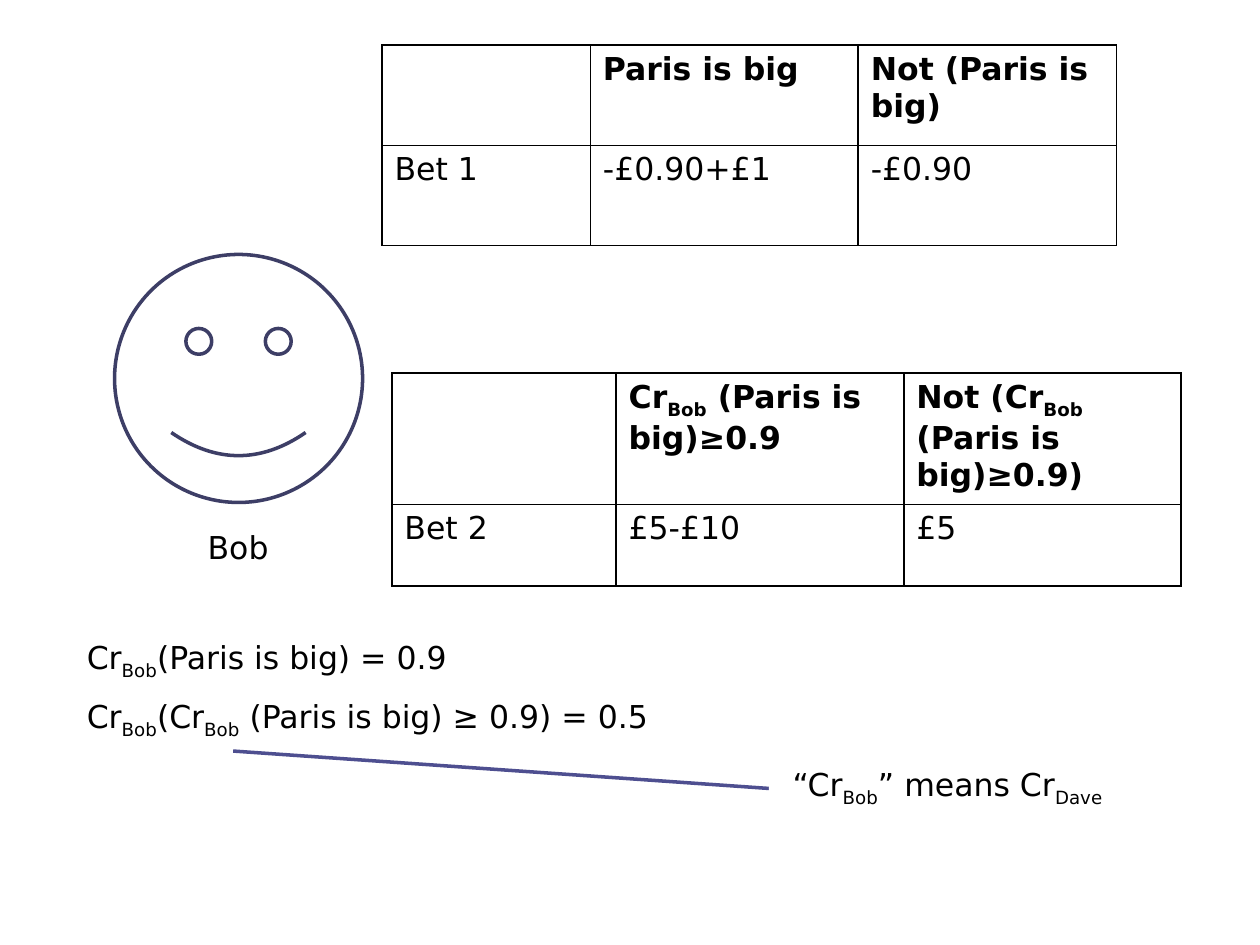
from dataclasses import dataclass

from lxml import etree
from pptx import Presentation
from pptx.dml.color import RGBColor
from pptx.enum.shapes import MSO_CONNECTOR, MSO_SHAPE
from pptx.enum.text import MSO_ANCHOR, PP_ALIGN
from pptx.oxml.ns import qn
from pptx.util import Cm, Pt

STRAIGHT = MSO_CONNECTOR.STRAIGHT
SMILEY = MSO_SHAPE.SMILEY_FACE
RECTANGLE = MSO_SHAPE.RECTANGLE
MIDDLE = MSO_ANCHOR.MIDDLE
LEFT = PP_ALIGN.LEFT
CENTER = PP_ALIGN.CENTER


@dataclass(frozen=True)
class Theme:
    font: str = "DejaVu Sans"
    size: int = 18
    ink: str = "000000"
    paper: str = "FFFFFF"
    face: str = "3D3E66"
    pointer: str = "4E4F90"
    stroke: float = 2
    border: float = 1
    subscript: str = "-25000"


class SlideBuilder:
    def __init__(self, slide, theme):
        self.shapes = slide.shapes
        self.theme = theme

    def set_wording(self, frame, wording, align=LEFT, bold=False):
        frame.word_wrap = True
        paragraph = frame.paragraphs[0]
        paragraph.alignment = align
        paragraph.font.name = self.theme.font
        paragraph.font.size = Pt(self.theme.size)
        paragraph.font.bold = bold
        paragraph.font.color.rgb = RGBColor.from_string(self.theme.ink)
        for position, part in enumerate(wording.split("|")):
            if not part:
                continue
            run = paragraph.add_run()
            run.text = part
            if position % 2:
                run._r.get_or_add_rPr().set("baseline", self.theme.subscript)

    def text(self, left, top, width, wording, align=LEFT):
        box = self.shapes.add_textbox(Cm(left), Cm(top), Cm(width), Cm(1.02))
        self.set_wording(box.text_frame, wording, align)

    def smiley(self, left, top, size):
        face = self.shapes.add_shape(SMILEY, Cm(left), Cm(top), Cm(size), Cm(size))
        face.shadow.inherit = False
        face.fill.background()
        face.line.color.rgb = RGBColor.from_string(self.theme.face)
        face.line.width = Pt(self.theme.stroke)

    def pointer(self, start_x, start_y, end_x, end_y):
        line = self.shapes.add_connector(
            STRAIGHT, Cm(start_x), Cm(start_y), Cm(end_x), Cm(end_y))
        line.line.color.rgb = RGBColor.from_string(self.theme.pointer)
        line.line.width = Pt(self.theme.stroke)
        etree.SubElement(line._element.spPr, qn("a:effectLst"))

    def note(self, left, top, width, height, wording):
        panel = self.shapes.add_shape(
            RECTANGLE, Cm(left), Cm(top), Cm(width), Cm(height))
        panel.shadow.inherit = False
        panel.fill.solid()
        panel.fill.fore_color.rgb = RGBColor.from_string(self.theme.paper)
        panel.line.fill.background()
        panel.text_frame.vertical_anchor = MIDDLE
        self.set_wording(panel.text_frame, wording, CENTER)

    def outline(self, cell):
        properties = cell._tc.get_or_add_tcPr()
        for order, side in enumerate(("lnL", "lnR", "lnT", "lnB")):
            edge = etree.Element(qn(f"a:{side}"), w=str(Pt(self.theme.border)))
            fill = etree.SubElement(edge, qn("a:solidFill"))
            etree.SubElement(fill, qn("a:srgbClr"), val=self.theme.ink)
            properties.insert(order, edge)

    def bet_table(self, left, top, widths, heights, rows):
        table = self.shapes.add_table(
            len(rows), len(widths), Cm(left), Cm(top),
            Cm(sum(widths)), Cm(sum(heights))).table
        table.first_row = table.horz_banding = False
        for column, width in zip(table.columns, widths):
            column.width = Cm(width)
        for row, height in zip(table.rows, heights):
            row.height = Cm(height)
        for r, wordings in enumerate(rows):
            for c, wording in enumerate(wordings):
                cell = table.cell(r, c)
                cell.fill.background()
                self.outline(cell)
                self.set_wording(cell.text_frame, wording, bold=r == 0)


def main():
    deck = Presentation()
    deck.slide_width, deck.slide_height = Cm(25.4), Cm(19.05)
    slide = deck.slides.add_slide(deck.slide_layouts[6])
    builder = SlideBuilder(slide, Theme())

    builder.smiley(2.31, 5.13, 5)
    builder.text(1.7, 10.52, 6.2, "Bob", CENTER)
    builder.text(1.5, 12.73, 19.4, "Cr|Bob|(Paris is big) = 0.9")
    builder.text(1.5, 13.92, 22, "Cr|Bob|(Cr|Bob| (Paris is big) ≥ 0.9) = 0.5")

    builder.bet_table(7.7, 0.91, (4.2, 5.4, 5.21), (2.02, 2.02), (
        ("", "Paris is big", "Not (Paris is big)"),
        ("Bet 1", "-£0.90+£1", "-£0.90"),
    ))
    builder.bet_table(7.9, 7.52, (4.52, 5.8, 5.59), (2.02, 1.65), (
        ("", "Cr|Bob| (Paris is big)≥0.9", "Not (Cr|Bob| (Paris is big)≥0.9)"),
        ("Bet 2", "£5-£10", "£5"),
    ))

    builder.pointer(16.3, 15.95, 4.7, 15.14)
    builder.note(15.5, 14.96, 7.2, 1.8, "“Cr|Bob|” means Cr|Dave|")
    deck.save("out.pptx")


if __name__ == "__main__":
    main()
